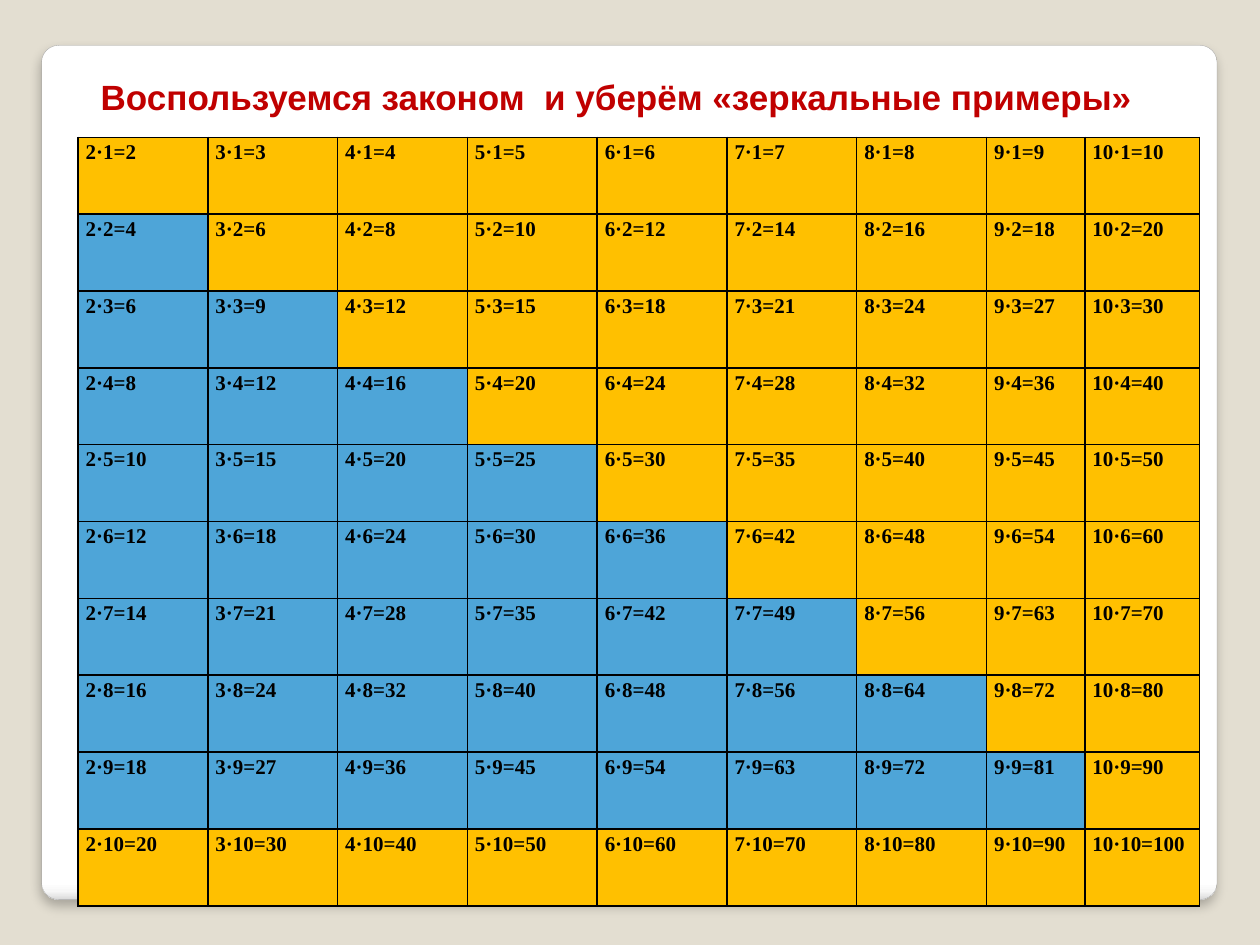
from lxml import etree
from pptx import Presentation
from pptx.dml.color import RGBColor
from pptx.enum.shapes import MSO_SHAPE
from pptx.oxml import parse_xml
from pptx.oxml.ns import qn
from pptx.util import Inches, Pt

ROUND = MSO_SHAPE.ROUNDED_RECTANGLE
NS = 'xmlns:a="http://schemas.openxmlformats.org/drawingml/2006/main"'
GOLD, BLUE = "FFC000", "4EA5D8"


def paint(fill, tint):
    fill.solid()
    fill.fore_color.rgb = RGBColor.from_string(tint)


def style(font, form):
    for key, value in form.items():
        if key == "tint":
            paint(font.fill, value)
        else:
            setattr(font, key, value)


deck = Presentation()
deck.slide_width, deck.slide_height = Inches(10), Inches(7.5)
slide = deck.slides.add_slide(deck.slide_layouts[6])
paint(slide.background.fill, "E3DED1")

card = slide.shapes.add_shape(ROUND, Inches(0.33), Inches(0.36), Inches(9.33), Inches(6.78))
card.adjustments[0] = 0.02
card.shadow.inherit = False
paint(card.line.fill, "A4A4A4")
card.line.width = Pt(0.16)
card.fill.gradient()
card.fill.gradient_angle = 270
props = card.element.spPr
stops = props.find(".//" + qn("a:gsLst"))
for stop in list(stops):
    stops.remove(stop)
for place, tint in [(0, "FFFFFF"), (98, "FFFFFF"), (99, "F7F7F7"), (100, "DADADA")]:
    stop = etree.SubElement(stops, qn("a:gs"), pos=str(place * 1000))
    etree.SubElement(stop, qn("a:srgbClr"), val=tint)
props.find(qn("a:effectLst")).append(parse_xml(
    f'<a:outerShdw {NS} blurRad="{Pt(6)}" dist="{Pt(4)}" dir="5400000" algn="t" rotWithShape="0">'
    '<a:srgbClr val="000000"><a:alpha val="25000"/></a:srgbClr></a:outerShdw>'))

widths = [1.03] * 7 + [0.78, 0.91]
frame = slide.shapes.add_table(10, 9, Inches(0.62), Inches(1.09), Inches(8.91), Inches(6.09))
table = frame.table
for column, width in zip(table.columns, widths):
    column.width = Inches(width)
for line in table.rows:
    line.height = Inches(0.61)

inset = {"margin_left": Inches(0.06), "margin_right": Inches(0.06),
         "margin_top": 0, "margin_bottom": 0}
entry = {"size": Pt(12), "name": "Times New Roman", "bold": True, "tint": "000000"}
for row in range(1, 11):
    for col in range(2, 11):
        cell = table.cell(row - 1, col - 2)
        for key, value in inset.items():
            setattr(cell, key, value)
        cell.text = f"{col}·{row}={col * row}"
        para = cell.text_frame.paragraphs[0]
        para.line_spacing = 1.15
        style(para.runs[0].font, entry)
        edges = cell._tc.get_or_add_tcPr()
        for side in "LRTB":
            edges.append(parse_xml(
                f'<a:ln{side} {NS} w="{Pt(1)}"><a:solidFill><a:srgbClr val="000000"/>'
                f'</a:solidFill></a:ln{side}>'))
        paint(cell.fill, BLUE if col <= row < 10 else GOLD)

title = slide.shapes.add_textbox(Inches(0.7), Inches(0.55), Inches(8.45), Inches(0.44))
title.text_frame.word_wrap = False
run = title.text_frame.paragraphs[0].add_run()
run.text = "Воспользуемся законом  и уберём «зеркальные примеры»"
style(run.font, {"size": Pt(20), "name": "Arial", "bold": True, "tint": "C00000"})

deck.save("out.pptx")
